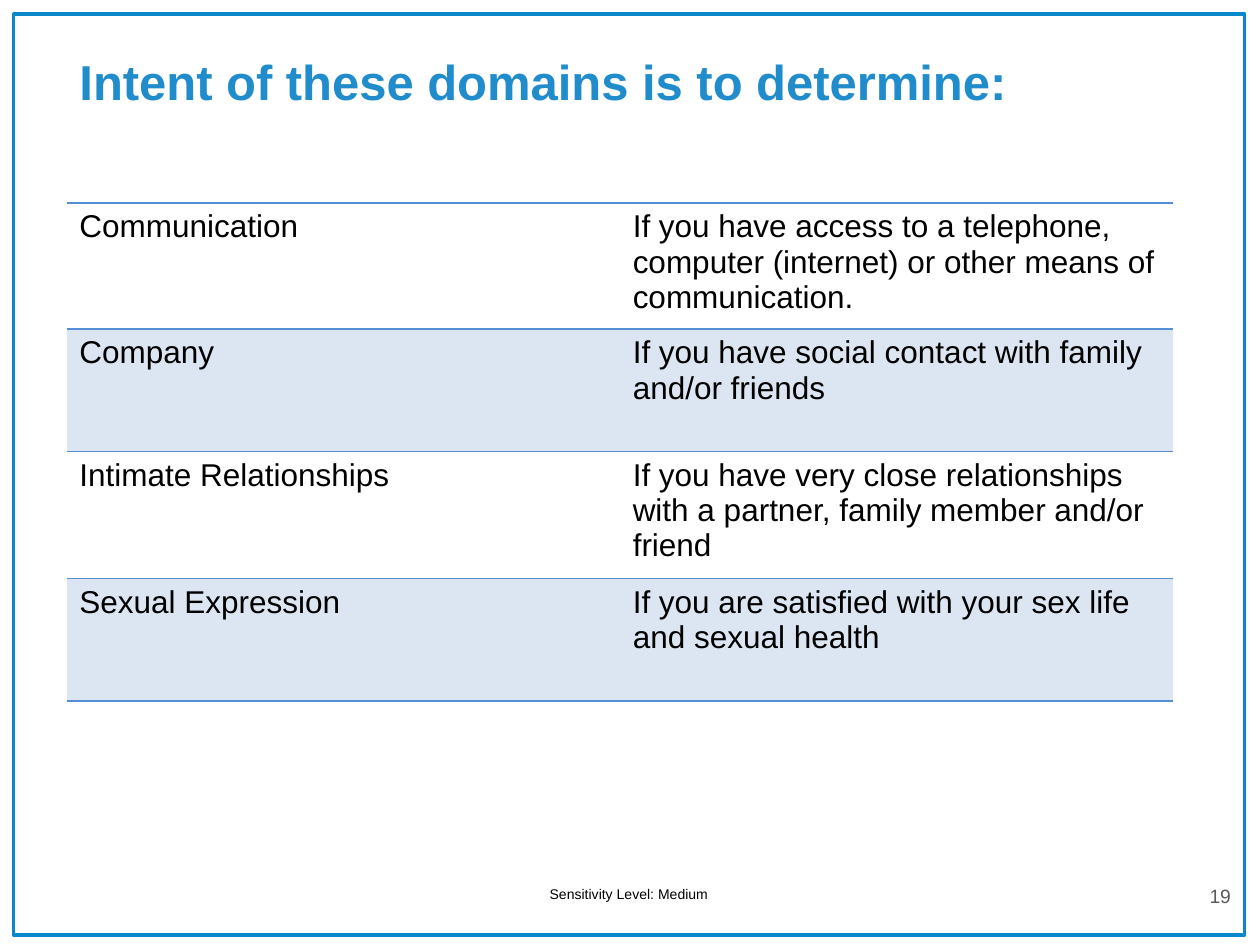
from dataclasses import dataclass

from lxml.etree import SubElement
from pptx import Presentation
from pptx.dml.color import RGBColor
from pptx.enum.shapes import MSO_SHAPE
from pptx.enum.text import MSO_ANCHOR, PP_ALIGN
from pptx.oxml import parse_xml
from pptx.oxml.ns import nsdecls, qn
from pptx.util import Pt


@dataclass(frozen=True)
class Theme:
    font: str = "Arial"
    title: str = "218CCC"
    frame: str = "0989CB"
    rule: str = "558ED5"
    band: str = "DCE6F2"
    text: str = "000000"
    muted: str = "595959"
    title_size: float = 28
    body_size: float = 18
    number_size: float = 11
    footer_size: float = 8


THEME = Theme()

DOMAINS = [
    ("Communication", "If you have access to a telephone, computer (internet) "
                      "or other means of communication."),
    ("Company", "If you have social contact with family and/or friends"),
    ("Intimate Relationships", "If you have very close relationships with a "
                               "partner, family member and/or friend"),
    ("Sexual Expression", "If you are satisfied with your sex life and sexual health"),
]
ROW_HEIGHTS = [70, 70, 72.7, 70]
COLUMN_WIDTH = 316.2


def write(frame, text, size, color, bold=False, align=PP_ALIGN.LEFT):
    frame.word_wrap = True
    paragraph = frame.paragraphs[0]
    paragraph.text = text
    paragraph.alignment = align
    font = paragraph.font
    font.name, font.size, font.bold = THEME.font, Pt(size), bold
    font.color.rgb = RGBColor.from_string(color)


def add_frame(slide):
    border = slide.shapes.add_shape(MSO_SHAPE.RECTANGLE, Pt(8), Pt(8), Pt(703.4), Pt(526.3))
    border.shadow.inherit = False
    border.fill.background()
    border.line.color.rgb = RGBColor.from_string(THEME.frame)
    border.line.width = Pt(1.75)


def set_title(slide, text):
    title = slide.shapes.title
    title.left, title.top, title.width, title.height = Pt(38.2), Pt(21), Pt(569), Pt(51)
    title.text_frame.vertical_anchor = MSO_ANCHOR.MIDDLE
    write(title.text_frame, text, THEME.title_size, THEME.title, bold=True)


def add_label(slide, box, text, size, color, align=PP_ALIGN.LEFT, anchor=MSO_ANCHOR.TOP):
    label = slide.shapes.add_textbox(*map(Pt, box)).text_frame
    label.vertical_anchor = anchor
    write(label, text, size, color, align=align)


def rule_cell(cell):
    """Draw the rules above and below a cell and leave its sides open."""
    properties = cell._tc.get_or_add_tcPr()
    for position, side in enumerate(("lnL", "lnR", "lnT", "lnB")):
        edge = parse_xml(f'<a:{side} {nsdecls("a")} w="{Pt(1)}"/>')
        if side in ("lnT", "lnB"):
            fill = SubElement(edge, qn("a:solidFill"))
            SubElement(fill, qn("a:srgbClr"), val=THEME.rule)
        else:
            SubElement(edge, qn("a:noFill"))
        properties.insert(position, edge)


def add_domain_table(slide):
    table = slide.shapes.add_table(
        len(DOMAINS), 2, Pt(38.2), Pt(116), Pt(2 * COLUMN_WIDTH), Pt(sum(ROW_HEIGHTS))).table
    table.first_row = table.horz_banding = False
    for column in table.columns:
        column.width = Pt(COLUMN_WIDTH)
    for index, (domain, height) in enumerate(zip(DOMAINS, ROW_HEIGHTS)):
        table.rows[index].height = Pt(height)
        for cell, text in zip(table.rows[index].cells, domain):
            write(cell.text_frame, text, THEME.body_size, THEME.text)
            if index % 2:
                cell.fill.solid()
                cell.fill.fore_color.rgb = RGBColor.from_string(THEME.band)
            else:
                cell.fill.background()
            rule_cell(cell)


def main():
    deck = Presentation()
    deck.slide_width, deck.slide_height = Pt(720), Pt(540)
    slide = deck.slides.add_slide(deck.slide_layouts[5])

    # Page furniture
    add_frame(slide)
    add_label(slide, (307, 502.6, 107, 17), "Sensitivity Level: Medium",
              THEME.footer_size, THEME.text)
    add_label(slide, (671, 497.5, 52.6, 28.8), "19", THEME.number_size, THEME.muted,
              PP_ALIGN.CENTER, MSO_ANCHOR.MIDDLE)

    # Content
    set_title(slide, "Intent of these domains is to determine:")
    add_domain_table(slide)

    deck.save("out.pptx")


if __name__ == "__main__":
    main()
